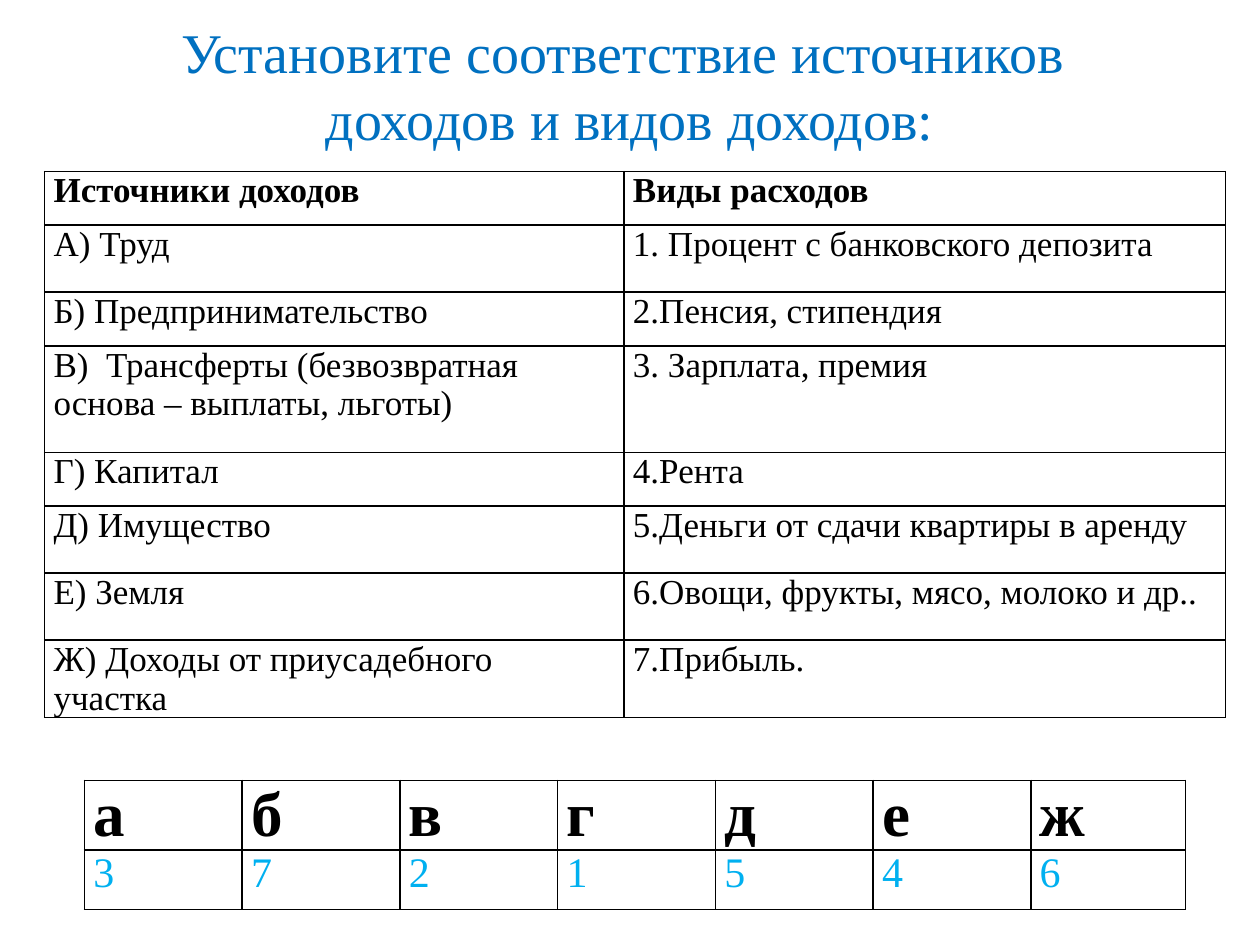
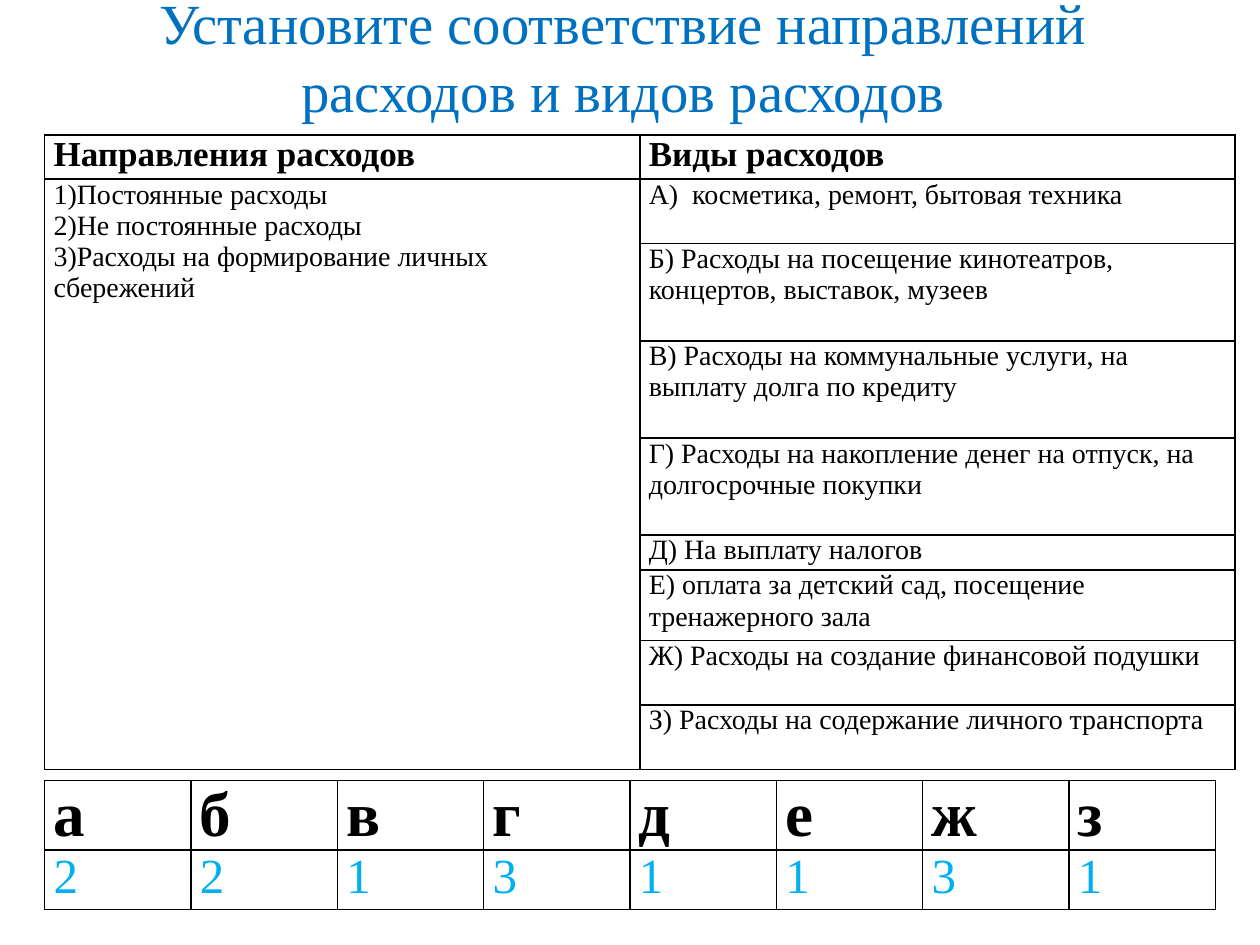
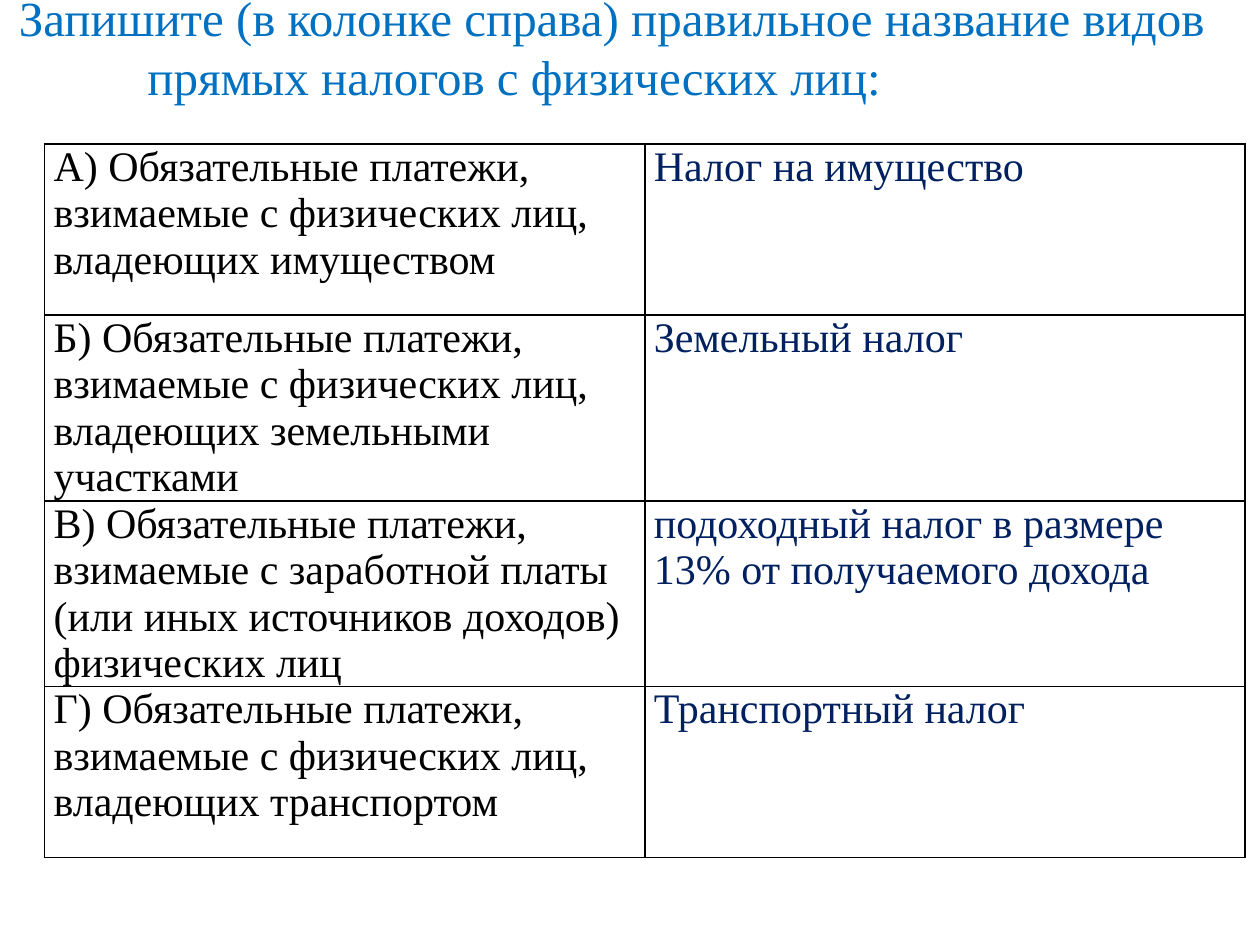
import pptx
import pptx.util
import pptx.dml.color
import pptx.enum.text
from lxml import etree

Cm = pptx.util.Cm
Pt = pptx.util.Pt
BLACK, BLUE, SKY, NAVY = "000000", "0070C0", "00B0F0", "002060"
NS = "http://schemas.openxmlformats.org/drawingml/2006/main"
EDGE = 0.9


def style(font, size, hue, bold=False):
    look = {"name": "Times New Roman", "size": Pt(size), "bold": bold}
    for key, value in look.items():
        setattr(font, key, value)
    font.color.rgb = pptx.dml.color.RGBColor.from_string(hue)


def grid(slide, left, top, widths, heights, texts, looks):
    """Add a black-ruled table; looks holds (size, hue, bold) for each cell."""
    frame = slide.shapes.add_table(len(heights), len(widths), Cm(left), Cm(top),
                                   Cm(sum(widths)), Cm(sum(heights)))
    table = frame.table
    table.first_row = table.horz_banding = False
    for col, width in zip(table.columns, widths):
        col.width = Cm(width)
    for row, height in zip(table.rows, heights):
        row.height = Cm(height)
    for row, words, kinds in zip(table.rows, texts, looks):
        for cell, text, look in zip(row.cells, words, kinds):
            cell.margin_left = cell.margin_right = Cm(0.18)
            cell.margin_top = cell.margin_bottom = 0
            cell.fill.background()
            props = cell._tc.get_or_add_tcPr()
            for spot, side in enumerate(("lnL", "lnR", "lnT", "lnB")):
                line = etree.Element(f"{{{NS}}}{side}", w=str(Pt(1)))
                fill = etree.SubElement(line, f"{{{NS}}}solidFill")
                etree.SubElement(fill, f"{{{NS}}}srgbClr", val=BLACK)
                props.insert(spot, line)
            cell.text = text
            for para in cell.text_frame.paragraphs:
                for run in para.runs:
                    style(run.font, *look)
    return table


deck = pptx.Presentation()
deck.slide_width, deck.slide_height = Cm(25.4), Cm(19.05)
MID = pptx.enum.text.MSO_ANCHOR.MIDDLE
LOW = pptx.enum.text.MSO_ANCHOR.BOTTOM
AXIS = pptx.enum.text.PP_ALIGN.CENTER
LEFT = pptx.enum.text.PP_ALIGN.LEFT

# Titles: lines, box, size, anchor, alignment, line indents
titles = [
    ("Установите соответствие источников \vдоходов и видов доходов:",
     (1.27, 0.25, 22.86, 2.9), 32, MID, AXIS, (0,)),
    ("Установите соответствие направлений \vрасходов и видов расходов ",
     (1.27, -0.28, 22.86, 2.8), 32.4, MID, AXIS, (0,)),
    ("Запишите (в колонке справа) правильное название видов\n"
     "прямых налогов с физических лиц:",
     (0, -1, 24.82, 3.13), 28, LOW, LEFT, (0.38, 2.97)),
]
slides = []
for text, box, size, anchor, align, indents in titles:
    slide = deck.slides.add_slide(deck.slide_layouts[5])
    slides.append(slide)
    title = slide.shapes.title
    for key, value in zip(("left", "top", "width", "height"), box):
        setattr(title, key, Cm(value))
    body = title.text_frame
    form = {"text": text, "word_wrap": True, "vertical_anchor": anchor,
            "auto_size": pptx.enum.text.MSO_AUTO_SIZE.NONE,
            "margin_left": 0, "margin_right": 0,
            "margin_top": 0, "margin_bottom": 0}
    for key, value in form.items():
        setattr(body, key, value)
    for para, indent in zip(body.paragraphs, indents):
        para.alignment = align
        para._p.get_or_add_pPr().set("marL", str(Cm(indent)))
        for run in para.runs:
            style(run.font, size, BLUE)

HEAD, KEY = (20, BLACK, True), (36, BLACK, True)

# Sources of income
income = [
    ("Источники доходов", "Виды расходов"),
    ("А) Труд", "1. Процент с банковского депозита"),
    ("Б) Предпринимательство", "2.Пенсия, стипендия"),
    ("В)  Трансферты (безвозвратная основа – выплаты, льготы)",
     "3. Зарплата, премия"),
    ("Г) Капитал", "4.Рента"),
    ("Д) Имущество", "5.Деньги от сдачи квартиры в аренду"),
    ("Е) Земля", "6.Овощи, фрукты, мясо, молоко и др.."),
    ("Ж) Доходы от приусадебного участка", "7.Прибыль."),
]
grid(slides[0], EDGE, 3.46, (11.68, 12.12),
     (1.08, 1.35, 1.08, 2.15, 1.08, 1.35, 1.35, 1.42),
     income, [[HEAD] * 2] + [[(20, BLACK)] * 2] * 7)

# Kinds of spending
kinds = [
    "А)  косметика, ремонт, бытовая техника",
    "Б) Расходы на посещение кинотеатров, концертов, выставок, музеев",
    "В) Расходы на коммунальные услуги, на выплату долга по кредиту",
    "Г) Расходы на накопление денег на отпуск, на долгосрочные покупки",
    "Д) На выплату налогов",
    "Е) оплата за детский сад, посещение тренажерного зала",
    "Ж) Расходы на создание финансовой подушки",
    "З) Расходы на содержание личного транспорта",
]
ways = ("1)Постоянные расходы\n2)Не постоянные расходы\n"
        "3)Расходы на формирование личных сбережений")
spend = [("Направления расходов", "Виды расходов"), (ways, kinds[0])]
spend += [("", kind) for kind in kinds[1:]]
table = grid(slides[1], EDGE, 2.72, (12, 12),
             (0.89, 1.3, 1.96, 1.96, 1.95, 0.71, 1.42, 1.3, 1.3),
             spend, [[HEAD] * 2] + [[(16, BLACK)] * 2] * 8)
table.cell(1, 0).merge(table.cell(8, 0))

# Answer keys
keys = [
    (slides[0], 1.7, (3.18,) * 6 + (3.12,), "абвгдеж", "3721546", 24),
    (slides[1], EDGE, (2.95,) * 8, "абвгдежз", "22131131", 28),
]
for slide, left, widths, names, marks, size in keys:
    count = len(names)
    grid(slide, left, 15.73, widths, (1.2, 1.2), (names, marks),
         ([KEY] * count, [(size, SKY)] * count))

# Direct taxes
owed = "Обязательные платежи, взимаемые с"
taxes = [
    (f"А) {owed} физических лиц, владеющих имуществом",
     "Налог на имущество"),
    (f"Б) {owed} физических лиц, владеющих земельными участками",
     "Земельный налог"),
    (f"В) {owed} заработной платы (или иных источников доходов) физических лиц",
     "подоходный налог в размере 13% от получаемого дохода"),
    (f"Г) {owed} физических лиц, владеющих транспортом",
     "Транспортный налог"),
]
grid(slides[2], EDGE, 2.9, (12.1, 12.1), (3.45,) * 4,
     taxes, [[(24, BLACK), (24, NAVY)]] * 4)

deck.save("out.pptx")
